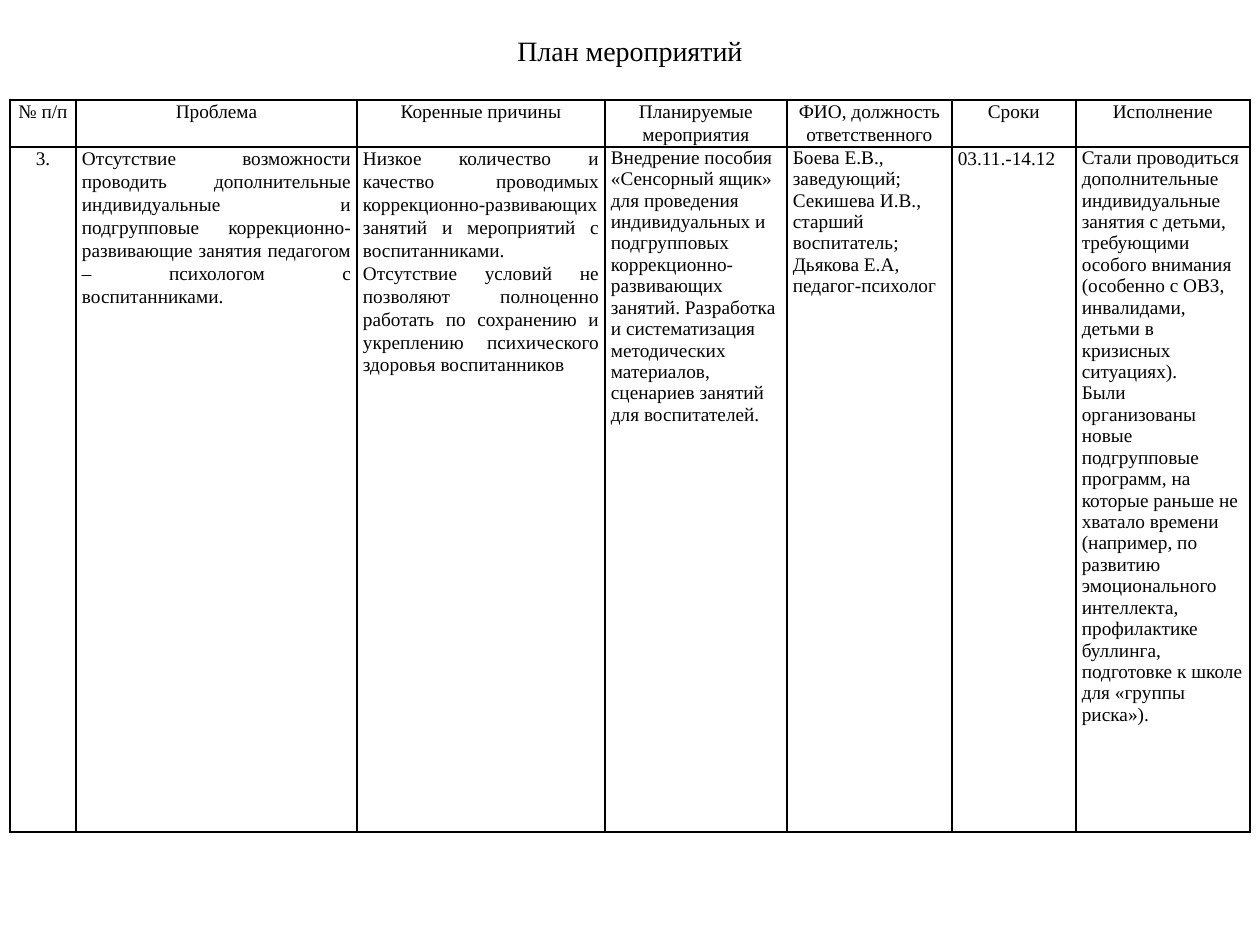
from collections import namedtuple

from lxml.etree import SubElement
from pptx import Presentation
from pptx.dml.color import RGBColor
from pptx.enum.text import MSO_ANCHOR, PP_ALIGN as Align
from pptx.oxml.ns import qn
from pptx.util import Emu, Pt

Theme = namedtuple("Theme", "font ink title_size table_size border")
theme = Theme("Times New Roman", "000000", Pt(16), Pt(11), Pt(1))


def px(count):
    return Emu(round(count * 914400 / 126))


def style(paragraph, size, align, spacing=1.0):
    paragraph.alignment = align
    paragraph.line_spacing = spacing
    paragraph.space_before = Pt(0)
    paragraph.font.name = theme.font
    paragraph.font.size = size
    paragraph.font.bold = False
    paragraph.font.color.rgb = RGBColor.from_string(theme.ink)


deck = Presentation()
deck.slide_width, deck.slide_height = px(1260), px(945)
slide = deck.slides.add_slide(deck.slide_layouts[5])

# Title
title = slide.shapes.title
title.left, title.top, title.width, title.height = px(63), px(26), px(1134), px(49)
title.text_frame.text = "План мероприятий"
title.text_frame.vertical_anchor = MSO_ANCHOR.MIDDLE
style(title.text_frame.paragraphs[0], theme.title_size, Align.CENTER)

# Plan: heading, column width, alignment and line spacing of the entry, entry
columns = [
    ("№ п/п", 66, Align.CENTER, 1.07, "3."),
    ("Проблема", 281, Align.JUSTIFY, 1.07,
     "Отсутствие возможности проводить дополнительные индивидуальные и подгрупповые "
     "коррекционно-развивающие занятия педагогом – психологом с воспитанниками."),
    ("Коренные причины", 248, Align.JUSTIFY, 1.07,
     "Низкое количество и качество проводимых коррекционно-развивающих занятий и "
     "мероприятий с воспитанниками. Отсутствие условий не позволяют полноценно "
     "работать по сохранению и укреплению психического здоровья воспитанников"),
    ("Планируемые мероприятия", 182, Align.LEFT, 1.0,
     "Внедрение пособия «Сенсорный ящик» для проведения индивидуальных и подгрупповых "
     "коррекционно-развивающих занятий. Разработка и систематизация методических "
     "материалов, сценариев занятий для воспитателей."),
    ("ФИО, должность ответственного", 165, Align.LEFT, 1.0,
     "Боева Е.В., заведующий;\n"
     "Секишева И.В., старший воспитатель;\n"
     "Дьякова Е.А, педагог-психолог"),
    ("Сроки", 124, Align.JUSTIFY, 1.07, "03.11.-14.12"),
    ("Исполнение", 174, Align.LEFT, 1.0,
     "Стали проводиться дополнительные индивидуальные занятия с детьми, требующими "
     "особого внимания (особенно с ОВЗ, инвалидами, детьми в кризисных ситуациях).\n"
     "Были организованы новые подгрупповые программ, на которые раньше не хватало "
     "времени (например, по развитию эмоционального интеллекта, профилактике буллинга, "
     "подготовке к школе для «группы риска»)."),
]
row_heights = [47, 685]
plan_width = sum(width for _, width, *_ in columns)
plan = slide.shapes.add_table(
    len(row_heights), len(columns), px(10), px(100), px(plan_width), px(sum(row_heights))
).table
plan.first_row = plan.horz_banding = False
for row, height in zip(plan.rows, row_heights):
    row.height = px(height)

for index, (heading, width, align, spacing, entry) in enumerate(columns):
    plan.columns[index].width = px(width)
    contents = [(heading, Align.CENTER, 1.07), (entry, align, spacing)]
    for row_index, (wording, cell_align, cell_spacing) in enumerate(contents):
        cell = plan.cell(row_index, index)
        cell.margin_left = cell.margin_right = px(6)
        cell.margin_top = cell.margin_bottom = 0
        cell.vertical_anchor = MSO_ANCHOR.TOP
        cell.text_frame.text = wording
        for paragraph in cell.text_frame.paragraphs:
            style(paragraph, theme.table_size, cell_align, cell_spacing)

        # Borders come before the fill in the cell properties
        properties = cell._tc.get_or_add_tcPr()
        for side in ("a:lnL", "a:lnR", "a:lnT", "a:lnB"):
            border = SubElement(properties, qn(side), w=str(theme.border))
            ink = SubElement(border, qn("a:solidFill"))
            SubElement(ink, qn("a:srgbClr"), val=theme.ink)
        cell.fill.background()

deck.save("out.pptx")
